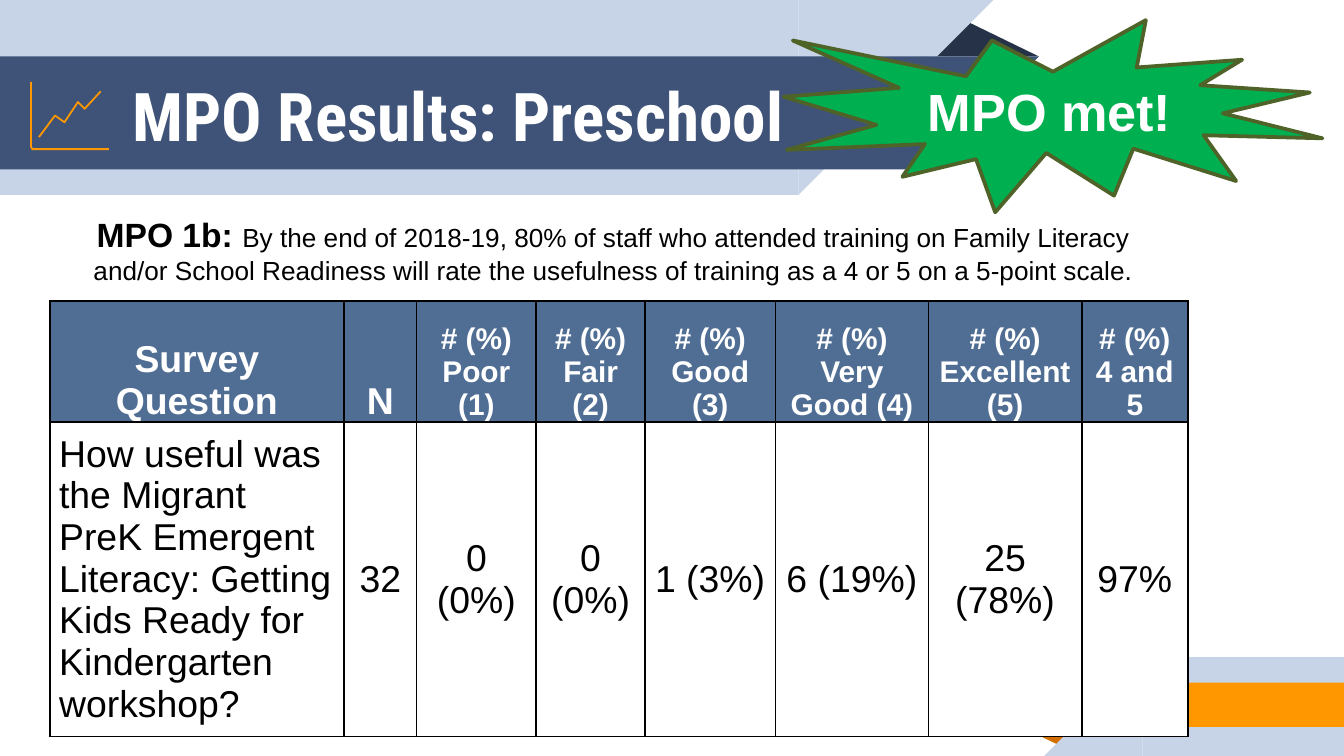
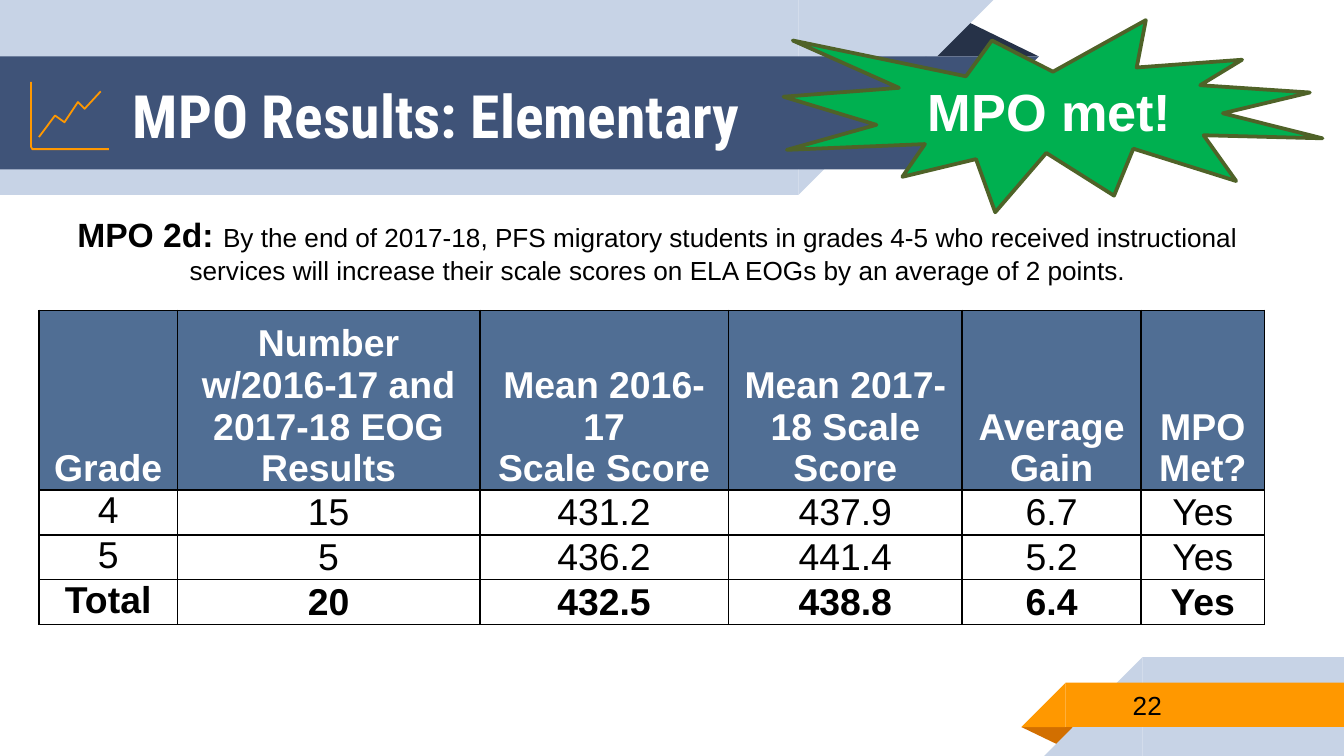
"""Two slides that report MPO results, each with a banner, a table and a star."""
from dataclasses import dataclass
from typing import NamedTuple, Optional

from lxml import etree
from pptx import Presentation
from pptx import util as u
from pptx.dml.color import RGBColor
from pptx.enum import shapes, text
from pptx.oxml import ns

COLS, ROWS = 100, 56.25
WIDTH, HEIGHT = u.Inches(10), u.Inches(5.625)
S = shapes.MSO_SHAPE
A, ANCHOR = text.PP_ALIGN, text.MSO_ANCHOR


def col(n: float) -> int:
    """Length of n grid columns."""
    return round(n * WIDTH / COLS)


def row(n: float) -> int:
    """Length of n grid rows."""
    return round(n * HEIGHT / ROWS)


class Box(NamedTuple):
    """A place on the grid, in columns and rows."""
    x: float
    y: float
    w: float
    h: float

    def emu(self) -> tuple:
        """Left, top, width and height in EMU."""
        return col(self.x), row(self.y), col(self.w), row(self.h)


@dataclass(frozen=True)
class Theme:
    """Colours, fonts and type sizes of the deck."""
    white: str = "FFFFFF"
    black: str = "000000"
    pale: str = "C7D3E6"
    navy: str = "3F5378"
    night: str = "263248"
    orange: str = "FF9800"
    rust: str = "D26F00"
    header: str = "506E94"
    green: str = "00B050"
    olive: str = "4F6228"
    head_font: str = "Roboto Condensed"
    body_font: str = "Arial"
    star: int = 28
    lead: int = 18
    body: int = 14
    cell: int = 20
    small_cell: int = 16
    icon_line: float = 0.96
    star_line: float = 2
    border: float = 1


T = Theme()


class Band(NamedTuple):
    """A filled piece of the banner or the footer."""
    kind: int
    box: Box
    fill: str
    turn: int = 0
    flip: bool = True
    apex: Optional[float] = None


BANDS = (
    Band(S.ISOSCELES_TRIANGLE, Box(68.8, 1.4, 8.5, 2.8), T.night, 0, False, 0.324),
    Band(S.RECTANGLE, Box(0, 0, 59.4, 14.5), T.pale, 180),
    Band(S.RIGHT_TRIANGLE, Box(59.4, 0, 14.5, 14.5), T.pale, 180),
    Band(S.RECTANGLE, Box(0, 4.2, 68.9, 8.4), T.navy, 180),
    Band(S.RIGHT_TRIANGLE, Box(68.9, 4.2, 8.4, 8.4), T.navy, 180),
    Band(S.ISOSCELES_TRIANGLE, Box(76, 54.1, 4.3, 1.4), T.rust, 180, False, 0.324),
    Band(S.RECTANGLE, Box(85, 48.9, 15, 7.35), T.pale),
    Band(S.RIGHT_TRIANGLE, Box(77.7, 48.9, 7.3, 7.35), T.pale),
    Band(S.RECTANGLE, Box(79.3, 50.8, 20.7, 3.3), T.orange),
    Band(S.RIGHT_TRIANGLE, Box(76, 50.8, 3.3, 3.3), T.orange),
)
ICON = (
    ((2.3, 6.1), (2.3, 10.9), (2.4, 11.1), (2.5, 11.1), (8.1, 11.1)),
    ((2.9, 10.2), (4.1, 8.6), (4.8, 9.1), (5.8, 7.6), (6.3, 8.1), (7.5, 6.8)),
)
TITLE = Box(8.9, 4.3, 60.1, 8.4)
NUMBER = Box(83.3, 50.7, 16.3, 3.5)
STAR = Box(58.3, 1.5, 40.1, 14.3)


@dataclass(frozen=True)
class Grid:
    """A results table: its place, tracks, wording and style."""
    x: float
    y: float
    widths: tuple
    heights: tuple
    cells: tuple
    full_size_heads: int
    lead_align: int = A.CENTER
    lead_anchor: int = ANCHOR.TOP
    fill: Optional[str] = None
    total: bool = False


@dataclass(frozen=True)
class Result:
    """The content of one slide."""
    title: str
    title_size: int
    goal: str
    goal_text: str
    goal_width: float
    grid: Grid
    number: str = ""


RESULTS = (
    Result(
        "MPO Results: Preschool", 36, "MPO 1b: ",
        "By the end of 2018-19, 80% of staff who attended training on Family Literacy "
        "and/or School Readiness will rate the usefulness of training as a 4 or 5 "
        "on a 5-point scale.", 83.9,
        Grid(3.7, 22.4, (21.9, 5.4, 8.9, 8.1, 9.7, 11.4, 11.4, 7.9), (9, 23.4), (
            ("Survey Question", "N", "# (%) Poor (1)", "# (%) Fair (2)", "# (%) Good (3)",
             "# (%) Very Good (4)", "# (%) Excellent (5)", "# (%) 4 and 5"),
            ("How useful was the Migrant PreK Emergent Literacy: Getting Kids Ready for "
             "Kindergarten workshop?", "32", "0 (0%)", "0 (0%)", "1 (3%)", "6 (19%)",
             "25 (78%)", "97%"),
        ), 2, A.LEFT, ANCHOR.MIDDLE, T.white)),
    Result(
        "MPO Results: Elementary", 32, "MPO 2d: ",
        "By the end of 2017-18, PFS migratory students in grades 4-5 who received "
        "instructional services will increase their scale scores on ELA EOGs by an "
        "average of 2 points.", 90.5,
        Grid(2.9, 23.1, (10.3, 22.5, 18.5, 17.4, 13.3, 9.2), (13.3, 3.35, 3.35, 3.35), (
            ("Grade", "Number w/2016-17 and 2017-18 EOG Results",
             "Mean 2016-17\nScale Score", "Mean 2017-18 Scale Score", "Average Gain",
             "MPO Met?"),
            ("4", "15", "431.2", "437.9", "6.7", "Yes"),
            ("5", "5", "436.2", "441.4", "5.2", "Yes"),
            ("Total", "20", "432.5", "438.8", "6.4", "Yes"),
        ), 6, total=True), "22"),
)


def rgb(color: str) -> RGBColor:
    """Colour object for a hex value."""
    return RGBColor.from_string(color)


def set_font(font, size: float, color: str, bold: bool = False,
             name: str = T.body_font) -> None:
    """Apply the type style to a font."""
    font.name, font.size, font.bold = name, u.Pt(size), bold
    font.color.rgb = rgb(color)


def write(tf, wording: str, size: float, color: str, bold: bool = False,
          align: int = A.LEFT, name: str = T.body_font) -> None:
    """Fill a text frame, one paragraph for each line."""
    tf.text = wording
    for p in tf.paragraphs:
        p.alignment = align
        set_font(p.font, size, color, bold, name)


def add_text(slide, box: Box, anchor: int = ANCHOR.TOP, inset: float = 0.5):
    """Add a wrapping text box and return its frame."""
    tf = slide.shapes.add_textbox(*box.emu()).text_frame
    tf.word_wrap, tf.vertical_anchor = True, anchor
    tf.margin_top = tf.margin_bottom = row(inset)
    return tf


def add_filled(slide, kind: int, box: Box, fill: str):
    """Add a flat preset shape without an outline."""
    sp = slide.shapes.add_shape(kind, *box.emu())
    sp.shadow.inherit = False
    sp.fill.solid()
    sp.fill.fore_color.rgb = rgb(fill)
    sp.line.fill.background()
    return sp


def add_band(slide, band: Band) -> None:
    """Draw one piece of the banner or the footer."""
    sp = add_filled(slide, band.kind, band.box, band.fill)
    sp.rotation = band.turn
    if band.flip:
        sp._element.spPr.get_or_add_xfrm().set("flipH", "1")
    if band.apex is not None:
        sp.adjustments[0] = band.apex


def add_stroke(slide, points: tuple) -> None:
    """Draw one open line of the chart icon."""
    first, *rest = [(col(x), row(y)) for x, y in points]
    pen = slide.shapes.build_freeform(*first)
    pen.add_line_segments(rest, close=False)
    sp = pen.convert_to_shape()
    sp.shadow.inherit = False
    sp.fill.background()
    sp.line.color.rgb = rgb(T.orange)
    sp.line.width = u.Pt(T.icon_line)


def add_star(slide) -> None:
    """Draw the star that says the goal was met."""
    sp = add_filled(slide, S.EXPLOSION1, STAR, T.green)
    sp.line.color.rgb = rgb(T.olive)
    sp.line.width = u.Pt(T.star_line)
    sp.text_frame.vertical_anchor = ANCHOR.MIDDLE
    write(sp.text_frame, "MPO met!", T.star, T.white, True, A.CENTER)


def add_borders(cell) -> None:
    """Rule all four sides of a cell."""
    pr = cell._tc.get_or_add_tcPr()
    for i, side in enumerate(("lnL", "lnR", "lnT", "lnB")):
        ln = etree.Element(ns.qn(f"a:{side}"), w=str(u.Pt(T.border)))
        fill = etree.SubElement(ln, ns.qn("a:solidFill"))
        etree.SubElement(fill, ns.qn("a:srgbClr"), val=T.black)
        pr.insert(i, ln)


def fill_cell(cell, grid: Grid, i: int, j: int) -> None:
    """Write and style the cell in row i and column j."""
    head, lead = i == 0, j == 0
    cell.margin_left = cell.margin_right = col(0.7)
    cell.margin_top = cell.margin_bottom = 0
    cell.vertical_anchor = (ANCHOR.BOTTOM if head else
                            grid.lead_anchor if lead else ANCHOR.MIDDLE)
    fill = T.header if head else None if lead else grid.fill
    if fill:
        cell.fill.solid()
        cell.fill.fore_color.rgb = rgb(fill)
    else:
        cell.fill.background()
    add_borders(cell)
    write(cell.text_frame, grid.cells[i][j],
          T.small_cell if head and j >= grid.full_size_heads else T.cell,
          T.white if head else T.black,
          head or (grid.total and i == len(grid.cells) - 1),
          grid.lead_align if lead and not head else A.CENTER)


def add_grid(slide, grid: Grid) -> None:
    """Draw the results table."""
    box = Box(grid.x, grid.y, sum(grid.widths), sum(grid.heights))
    table = slide.shapes.add_table(len(grid.heights), len(grid.widths), *box.emu()).table
    table.first_row = table.horz_banding = False
    for track, w in zip(table.columns, grid.widths):
        track.width = col(w)
    for track, h in zip(table.rows, grid.heights):
        track.height = row(h)
    for i, line in enumerate(grid.cells):
        for j in range(len(line)):
            fill_cell(table.cell(i, j), grid, i, j)


def add_goal(slide, result: Result) -> None:
    """Write the goal with its bold label."""
    tf = add_text(slide, Box(3.7, 15.4, result.goal_width, 6.4))
    tf.auto_size = text.MSO_AUTO_SIZE.SHAPE_TO_FIT_TEXT
    p = tf.paragraphs[0]
    p.alignment = A.CENTER
    for wording, size, bold in ((result.goal, T.lead, True),
                                (result.goal_text, T.body, False)):
        r = p.add_run()
        r.text = wording
        set_font(r.font, size, T.black, bold)


def add_result(prs, result: Result) -> None:
    """Build one slide."""
    slide = prs.slides.add_slide(prs.slide_layouts[6])
    for band in BANDS:
        add_band(slide, band)
    write(add_text(slide, TITLE, ANCHOR.MIDDLE, 1), result.title, result.title_size,
          T.white, True, name=T.head_font)
    if result.number:
        write(add_text(slide, NUMBER, ANCHOR.MIDDLE, 1), result.number, T.body, T.black)
    add_goal(slide, result)
    for points in ICON:
        add_stroke(slide, points)
    add_grid(slide, result.grid)
    add_star(slide)


def main() -> None:
    """Build and save the deck."""
    prs = Presentation()
    prs.slide_width, prs.slide_height = WIDTH, HEIGHT
    for result in RESULTS:
        add_result(prs, result)
    prs.save("out.pptx")


if __name__ == "__main__":
    main()
